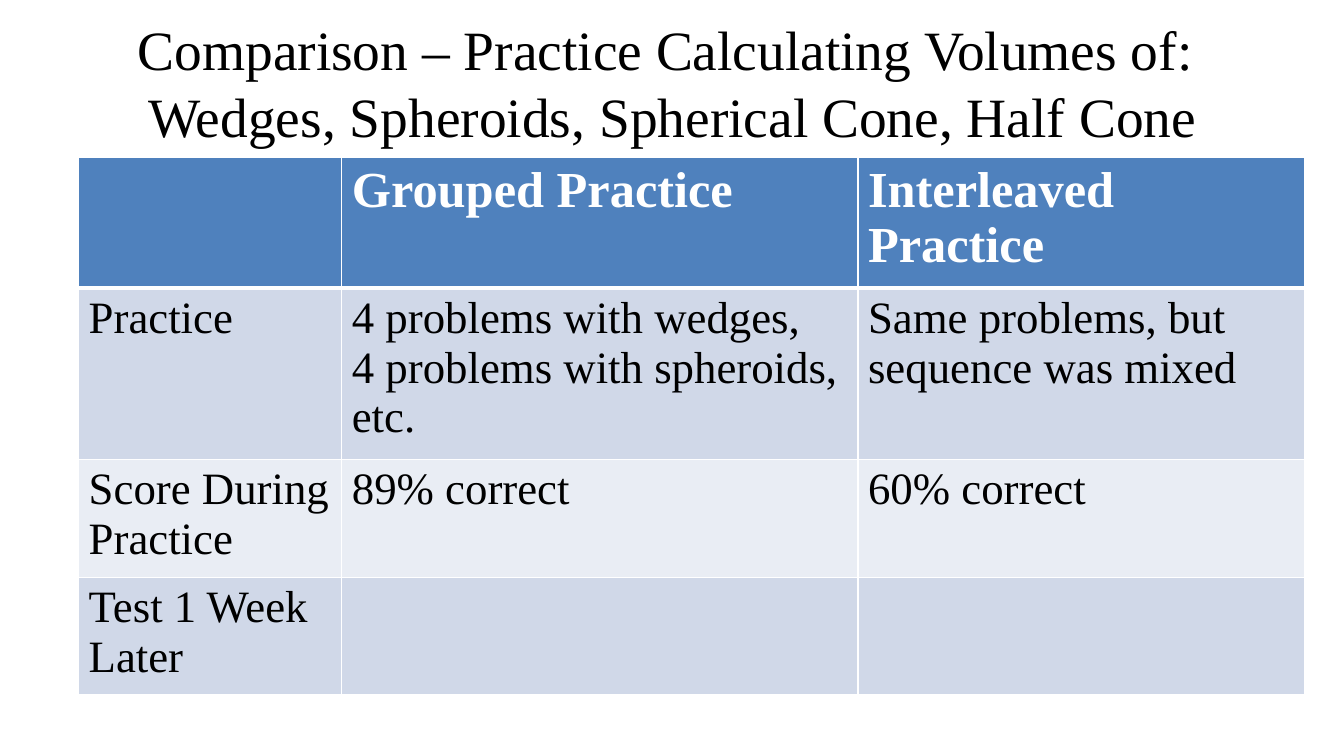
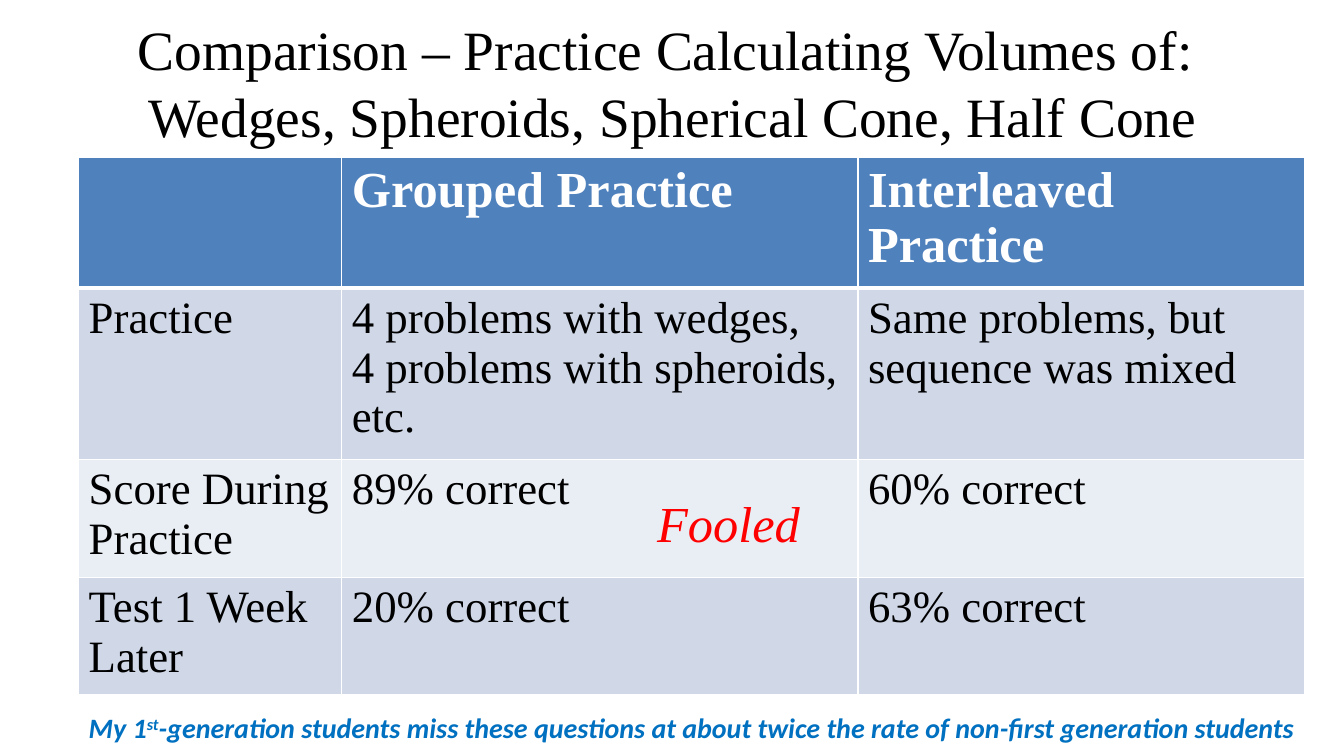
import pptx
import pptx.util
import pptx.dml.color
import pptx.enum.text
from lxml import etree

Inches, Pt = pptx.util.Inches, pptx.util.Pt
RGB = pptx.dml.color.RGBColor.from_string
ALIGN = pptx.enum.text.PP_ALIGN
ANCHOR = pptx.enum.text.MSO_ANCHOR
A = "http://schemas.openxmlformats.org/drawingml/2006/main"

# Theme: text styles are (size, font, colour, bold, italic)
THEME = {
    "title": (39.6, "Times New Roman", "000000", False, False),
    "header": (36, "Times New Roman", "FFFFFF", True, False),
    "body": (32, "Times New Roman", "000000", False, False),
    "verdict": (36, "Times New Roman", "FF0000", False, True),
    "note": (20, "Calibri", "0070C0", True, True),
    "header_fill": "4F81BD",
    "bands": ("D0D8E8", "E9EDF4"),
    "border": "FFFFFF",
}
TITLE = ("Comparison – Practice Calculating Volumes of: ",
         "Wedges, Spheroids, Spherical Cone, Half Cone")
COLS = (2.61, 5.12, 4.43)
ROWS = (1.13, 1.48, 0.63, 0.63)  # minimum heights, rows grow with their text
TABLE_WIDTH, TABLE_HEIGHT = Inches(12.17), Inches(5.33)
ROWS_SHARED = [
    ("", "Grouped Practice", "Interleaved Practice"),
    ("Practice", "4 problems with wedges,\n4 problems with spheroids,\netc.",
     "Same problems, but sequence was mixed"),
    ("Score During Practice", "89% correct", "60% correct"),
]
RESULTS = [("", ""), ("20% correct", "63% correct")]


def add_run(p, text, style):
    r = p.add_run()
    r.text = text
    size, r.font.name, colour, r.font.bold, r.font.italic = THEME[style]
    r.font.size = Pt(size)
    r.font.color.rgb = RGB(colour)
    return r


def add_box(s, left, top, width, height):
    tf = s.shapes.add_textbox(Inches(left), Inches(top), Inches(width), Inches(height)).text_frame
    tf.word_wrap = True
    return tf


prs = pptx.Presentation()
prs.slide_width, prs.slide_height = Inches(13.33), Inches(7.5)

for results in RESULTS:
    s = prs.slides.add_slide(prs.slide_layouts[6])

    # Title
    tf = add_box(s, 0.18, 0.24, 12.98, 1.14)
    tf.vertical_anchor = ANCHOR.MIDDLE
    p = tf.paragraphs[0]
    p.alignment = ALIGN.CENTER
    add_run(p, TITLE[0], "title")
    p.add_line_break()
    add_run(p, TITLE[1], "title")

    # Comparison table
    rows = ROWS_SHARED + [("Test 1 Week Later", *results)]
    frame = s.shapes.add_table(len(ROWS), len(COLS), Inches(0.78), Inches(1.56),
                               TABLE_WIDTH, TABLE_HEIGHT)
    table = frame.table
    for col, width in zip(table.columns, COLS):
        col.width = Inches(width)
    for i, texts in enumerate(rows):
        table.rows[i].height = Inches(ROWS[i])
        for j, text in enumerate(texts):
            cell = table.cell(i, j)
            # Thin white borders, thicker under the header
            tcPr = cell._tc.get_or_add_tcPr()
            for side in "LRTB":
                thick = (i, side) in ((0, "B"), (1, "T"))
                ln = etree.SubElement(tcPr, f"{{{A}}}ln{side}", w=str(Pt(3 if thick else 1)))
                fill = etree.SubElement(ln, f"{{{A}}}solidFill")
                etree.SubElement(fill, f"{{{A}}}srgbClr", val=THEME["border"])
            cell.fill.solid()
            cell.fill.fore_color.rgb = RGB(THEME["bands"][(i - 1) % 2] if i else THEME["header_fill"])
            if not text:
                continue
            tf = cell.text_frame
            for k, line in enumerate(text.split("\n")):
                p = tf.add_paragraph() if k else tf.paragraphs[0]
                add_run(p, line, "body" if i else "header")
    # Row and column changes resize the frame, so fix its size last
    frame.width, frame.height = TABLE_WIDTH, TABLE_HEIGHT

# Remarks beside the results, on the last slide only
p = add_box(s, 0.78, 7, 12.5, 0.44).paragraphs[0]
add_run(p, "My 1", "note")
r = add_run(p, "st", "note")
r._r.get_or_add_rPr().set("baseline", "30000")
add_run(p, "-generation students miss these questions at about twice the rate "
           "of non-first generation students", "note")

p = add_box(s, 6.42, 4.83, 2, 0.71).paragraphs[0]
add_run(p, "Fooled", "verdict")

prs.save("out.pptx")
